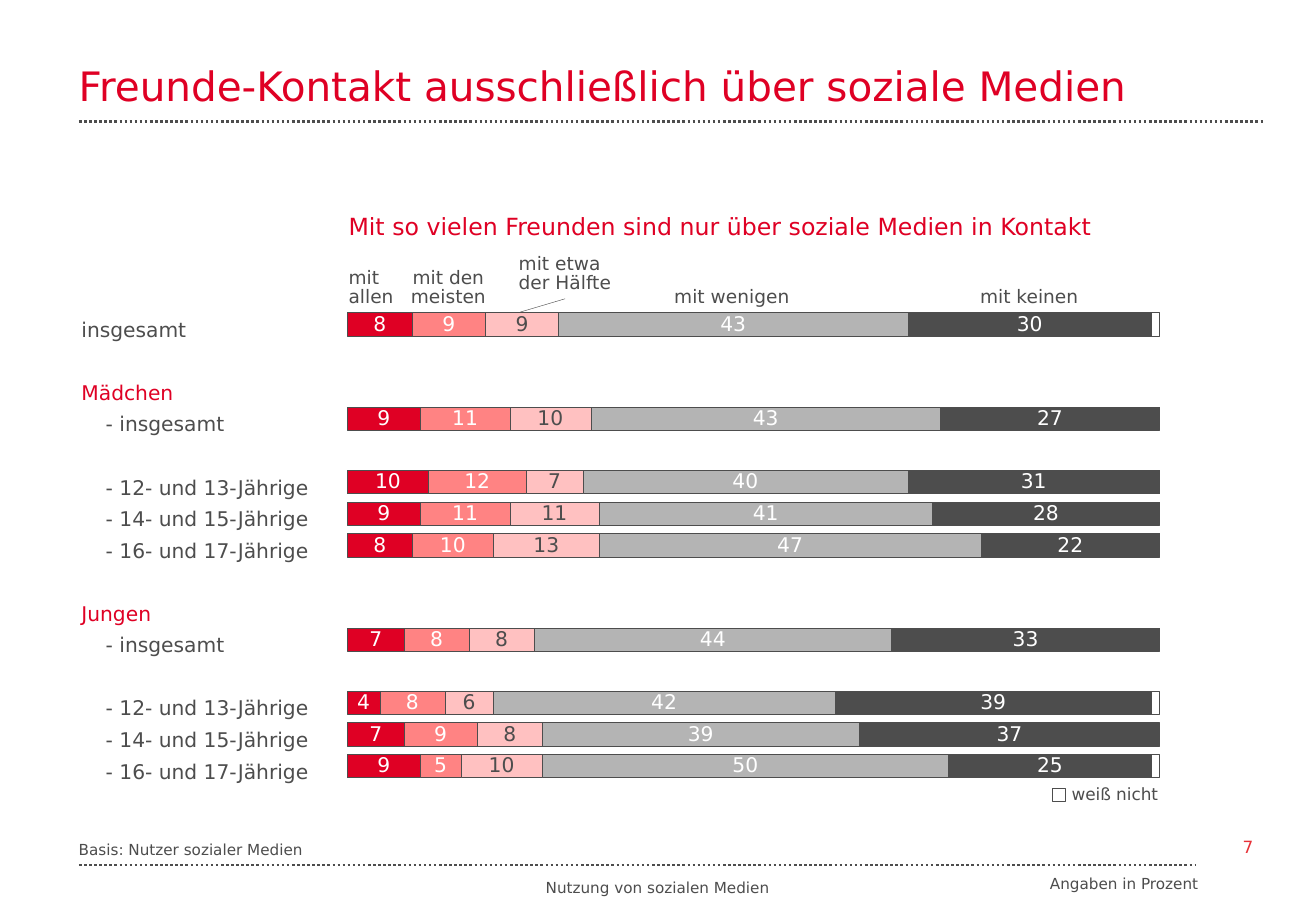
from lxml.etree import SubElement
from pptx import Presentation
from pptx.chart.data import CategoryChartData
from pptx.dml.color import RGBColor
from pptx.enum.chart import XL_CHART_TYPE, XL_LABEL_POSITION
from pptx.enum.dml import MSO_LINE
from pptx.enum.shapes import MSO_CONNECTOR, MSO_SHAPE
from pptx.enum.text import MSO_ANCHOR, PP_ALIGN
from pptx.oxml import parse_xml
from pptx.oxml.ns import nsdecls, qn
from pptx.util import Emu, Pt

FONT = "DejaVu Sans"
RED, GREY, WHITE = "DF0024", "4D4D4D", "FFFFFF"
LEFT, MID = PP_ALIGN.LEFT, PP_ALIGN.CENTER
ROW = 18.7

AGES = ["12- und 13-Jährige", "14- und 15-Jährige", "16- und 17-Jährige"]
GROUP = [("- insgesamt", 0, GREY, 20)] + [
    ("- " + age, int(i == 0), GREY, 20) for i, age in enumerate(AGES)]
NAMES = ([("insgesamt", 0, GREY, 0), ("Mädchen", 1, RED, 0)] + GROUP
         + [("Jungen", 1, RED, 0)] + GROUP)

VALUES = {
    1: [8, 9, 9, 43, 30, 1],
    4: [9, 11, 10, 43, 27, None],
    6: [10, 12, 7, 40, 31, None],
    7: [9, 11, 11, 41, 28, None],
    8: [8, 10, 13, 47, 22, None],
    11: [7, 8, 8, 44, 33, None],
    13: [4, 8, 6, 42, 39, 1],
    14: [7, 9, 8, 39, 37, None],
    15: [9, 5, 10, 50, 25, 1],
}
FILLS = [(RED, WHITE), ("FF8383", WHITE), ("FFC1C1", GREY),
         ("B4B4B4", WHITE), (GREY, WHITE), (WHITE, None)]


def px(n):
    return Emu(n * 9144)


def paint(code):
    return RGBColor.from_string(code)


def write(slide, box, text, size=11, color=GREY, align=LEFT,
          anchor=MSO_ANCHOR.BOTTOM, space=None, inset=(10, 5)):
    shape = slide.shapes.add_textbox(*map(px, box))
    frame = shape.text_frame
    frame.word_wrap = True
    frame.vertical_anchor = anchor
    frame.margin_left = frame.margin_right = px(inset[0])
    frame.margin_top = frame.margin_bottom = px(inset[1])
    rows = text if isinstance(text, list) else [
        (line, 0, color, 0) for line in text.split("\n")]
    for i, (line, gap, tint, indent) in enumerate(rows):
        para = frame.paragraphs[0] if i == 0 else frame.add_paragraph()
        para.alignment = align
        if space:
            para.line_spacing = space
        if gap:
            para.space_before = Pt(gap * ROW)
        if indent:
            props = para._p.get_or_add_pPr()
            props.set("marL", str(px(indent)))
            props.set("indent", "0")
        run = para.add_run()
        run.text = line
        run.font.name = FONT
        run.font.size = Pt(size)
        run.font.color.rgb = paint(tint)


def rule(slide, start, end, width=1.5, dash=MSO_LINE.ROUND_DOT):
    line = slide.shapes.add_connector(
        MSO_CONNECTOR.STRAIGHT, *map(px, start + end))
    line.line.color.rgb = paint(GREY)
    line.line.width = Pt(width)
    if dash:
        line.line.dash_style = dash
    SubElement(line._element.spPr, qn("a:effectLst"))


def head(slide, x, y, w, h):
    write(slide, (x - 10, y, w, h), "Freunde-Kontakt ausschließlich über soziale Medien",
          size=24, color=RED)
    rule(slide, (x, y + h + 5), (x + w, y + h + 5))


def bars(slide, x, y, w, h):
    data = CategoryChartData()
    data.categories = [str(n) for n in range(1, 16)]
    for i in range(len(FILLS)):
        data.add_series(f"Series {i + 1}", [
            VALUES[n][i] if n in VALUES else None for n in range(1, 16)])
    chart = slide.shapes.add_chart(
        XL_CHART_TYPE.BAR_STACKED, *map(px, (x, y, w, h)), data).chart
    chart.has_legend = chart.has_title = False
    chart.font.name = FONT
    chart.font.size = Pt(12)
    chart.font.color.rgb = paint(GREY)
    chart.category_axis.reverse_order = True
    scale = chart.value_axis
    scale.minimum_scale, scale.maximum_scale, scale.major_unit = 0, 100, 10
    scale.has_major_gridlines = False
    chart.category_axis.visible = scale.visible = False
    plot = chart.plots[0]
    plot.gap_width, plot.overlap = 35, 100
    plot.vary_by_categories = False
    for series, (fill, ink) in zip(plot.series, FILLS):
        series.format.fill.solid()
        series.format.fill.fore_color.rgb = paint(fill)
        series.format.line.color.rgb = paint(GREY)
        series.format.line.width = Pt(0.25)
        if ink:
            labels = series.data_labels
            labels.show_value = True
            labels.position = XL_LABEL_POSITION.CENTER
            labels.font.name = FONT
            labels.font.size = Pt(12)
            labels.font.color.rgb = paint(ink)
    area = chart._chartSpace.chart.plotArea
    for old in area.findall(qn("c:layout")):
        area.remove(old)
    area.insert(0, parse_xml(
        f'<c:layout {nsdecls("c")}><c:manualLayout><c:layoutTarget val="inner"/>'
        '<c:xMode val="edge"/><c:yMode val="edge"/><c:x val="0.022"/><c:y val="0.042"/>'
        '<c:w val="0.874"/><c:h val="0.781"/></c:manualLayout></c:layout>'))


def names(slide, x, y, w, h):
    write(slide, (x, y, w, h), NAMES, size=12, anchor=MSO_ANCHOR.TOP,
          space=1.3, inset=(12, 6))


def key(slide, x, y, w, h):
    write(slide, (x, y, w, 30),
          "Mit so vielen Freunden sind nur über soziale Medien in Kontakt",
          size=14, color=RED, space=0.85)
    for left, low, wide, tall, align, text in [
            (0, 0, 65, 42, LEFT, "mit\nallen"),
            (47, 0, 90, 42, MID, "mit den\nmeisten"),
            (140, 12, 105, 42, LEFT, "mit etwa\nder Hälfte"),
            (268, 0, 125, 26, LEFT, "mit wenigen"),
            (515, 0, 110, 26, MID, "mit keinen")]:
        write(slide, (x + left, y + h - low - tall, wide, tall), text,
              align=align, space=0.85)
    rule(slide, (x + 151, y + h - 1), (x + 188, y + h - 12), width=0.25, dash=None)


def legend(slide, x, y, w, h):
    write(slide, (x + 6, y, w, h), "weiß nicht", size=10, anchor=MSO_ANCHOR.TOP)
    mark = slide.shapes.add_shape(MSO_SHAPE.RECTANGLE, *map(px, (x, y + 9, 11, 11)))
    mark.shadow.inherit = False
    mark.fill.solid()
    mark.fill.fore_color.rgb = paint(WHITE)
    mark.line.color.rgb = paint(GREY)
    mark.line.width = Pt(0.25)


def foot(slide, x, y, w, h):
    base = y + 24
    write(slide, (x - 10, y, 220, 24), "Basis: Nutzer sozialer Medien",
          size=9, space=0.9)
    rule(slide, (x, base), (x + w, base))
    write(slide, (x + 363, base + 8, 226, 23), "Nutzung von sozialen Medien",
          size=9, align=MID, anchor=MSO_ANCHOR.MIDDLE, space=0.85)
    write(slide, (x + 785, base + 3, 150, 25), "Angaben in Prozent",
          size=9, align=MID, anchor=MSO_ANCHOR.TOP)
    write(slide, (x + 940, y - 10, 44, 39), "7", size=10, color="E73137",
          align=MID, anchor=MSO_ANCHOR.MIDDLE, inset=(0, 0))


def main():
    deck = Presentation()
    deck.slide_width, deck.slide_height = px(1083), px(750)
    slide = deck.slides.add_slide(deck.slide_layouts[6])
    head(slide, 65, 45, 976, 50)
    bars(slide, 269, 233, 765, 499)
    names(slide, 55, 249, 225, 405)
    key(slide, 277, 173, 650, 85)
    legend(slide, 866, 640, 100, 27)
    foot(slide, 65, 688, 919, 52)
    deck.save("out.pptx")


if __name__ == "__main__":
    main()
